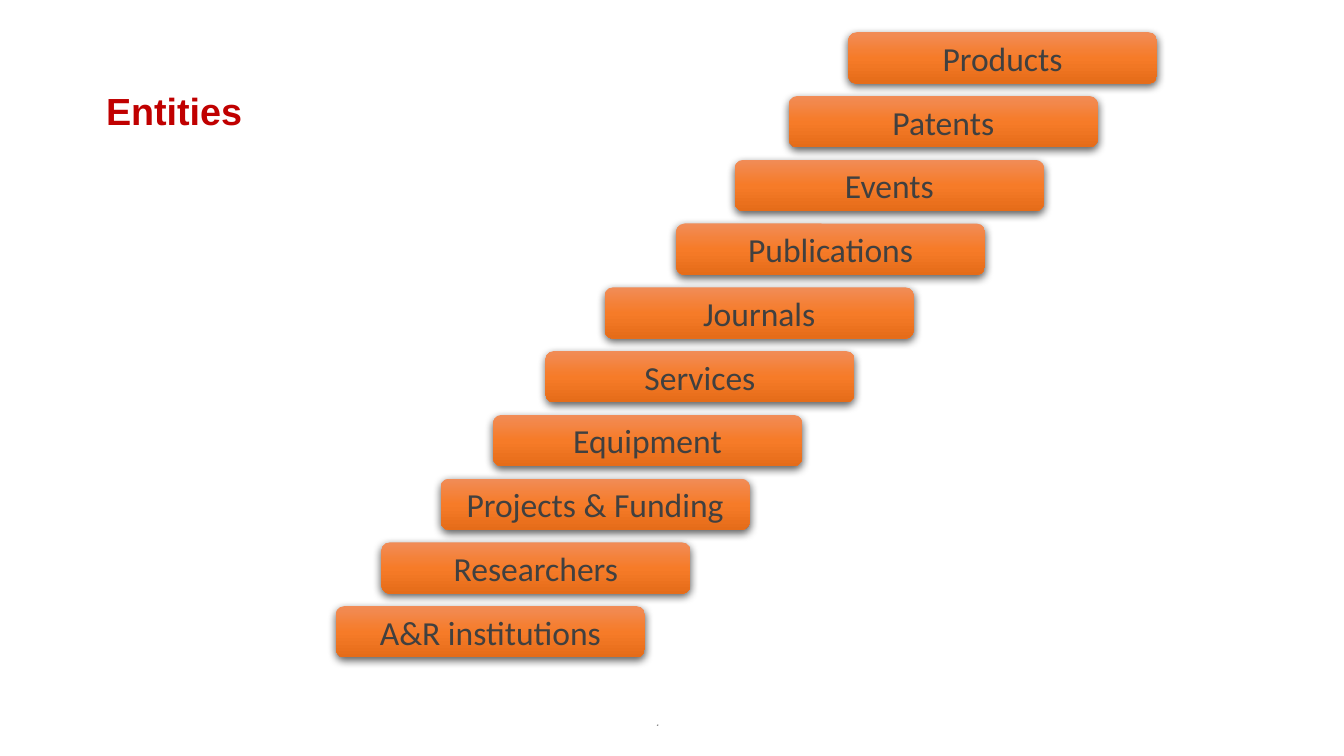
"""Build a slide with a title and a stair of entity bars."""
import copy
from dataclasses import dataclass

import pptx
import pptx.dml.color
import pptx.enum.shapes
import pptx.enum.text
import pptx.oxml
import pptx.oxml.ns
import pptx.util

Cm, Pt = pptx.util.Cm, pptx.util.Pt
RGB = pptx.dml.color.RGBColor.from_string
Align = pptx.enum.text.PP_ALIGN
Anchor = pptx.enum.text.MSO_ANCHOR


@dataclass(frozen=True)
class Theme:
    """Hold the colours, fonts and type sizes."""
    head: str = "C00000"
    ink: str = "404040"
    grey: str = "8C8C8C"
    glow: tuple = ((0, "F18C57"), (0.5, "F67B28"), (1, "E56C19"))
    sans: str = "Arial"
    body: str = "Calibri"
    big: float = 20.2
    mid: float = 18
    tiny: float = 7.5


THEME = Theme()
STEPS = (
    ("Products", 9.68),
    ("Patents", 8.56),
    ("Events", 7.54),
    ("Publications", 6.43),
    ("Journals", 5.08),
    ("Services", 3.96),
    ("Equipment", 2.97),
    ("Projects & Funding", 1.98),
    ("Researchers", 0.86),
    ("A&R institutions", 0),
)


def write(shape, text, font, size, color, align=Align.CENTER,
          bold=False, slant=False, space=None):
    """Put formatted text in a shape."""
    frame = shape.text_frame
    frame.text = text
    frame.word_wrap = True
    frame.auto_size = pptx.enum.text.MSO_AUTO_SIZE.NONE
    frame.vertical_anchor = Anchor.MIDDLE
    para = frame.paragraphs[0]
    para.alignment = align
    para.line_spacing = space
    face = para.runs[0].font
    face.name, face.size = font, Pt(size)
    face.bold, face.italic = bold, slant
    face.color.rgb = RGB(color)


def shade(shape):
    """Give a shape the glossy fill and a soft shadow."""
    props = shape._element.spPr
    qn = pptx.oxml.ns.qn
    shape.fill.gradient()
    stops = props.find(qn("a:gradFill")).find(qn("a:gsLst"))
    stops.append(copy.deepcopy(stops[-1]))
    shape.fill.gradient_angle = 270
    for stop, (place, color) in zip(shape.fill.gradient_stops, THEME.glow):
        stop.position = place
        stop.color.rgb = RGB(color)
    shape.line.fill.background()
    shape.shadow.inherit = False
    props.find(qn("a:effectLst")).append(pptx.oxml.parse_xml(
        f'<a:outerShdw {pptx.oxml.ns.nsdecls("a")} blurRad="{Pt(4.5)}" '
        f'dist="{Pt(1.5)}" dir="5400000" rotWithShape="0">'
        '<a:srgbClr val="000000"><a:alpha val="63000"/></a:srgbClr>'
        '</a:outerShdw>'))


def title(slide, left, top, width, height):
    """Place the slide title in its box."""
    shape = slide.shapes.title
    shape.left, shape.top = Cm(left), Cm(top)
    shape.width, shape.height = Cm(width), Cm(height)
    write(shape, "Entities", THEME.sans, THEME.big, THEME.head,
          align=Align.LEFT, bold=True, space=0.9)


def stairs(slide, left, top, width, height):
    """Place the bars from top to bottom of the box."""
    wide, tall = width - max(shift for _, shift in STEPS), 0.97
    pitch = (height - tall) / (len(STEPS) - 1)
    for row, (name, shift) in enumerate(STEPS):
        bar = slide.shapes.add_shape(
            pptx.enum.shapes.MSO_SHAPE.ROUNDED_RECTANGLE,
            Cm(left + shift), Cm(top + row * pitch), Cm(wide), Cm(tall))
        shade(bar)
        write(bar, name, THEME.body, THEME.mid, THEME.ink)
        bar.text_frame.margin_left = bar.text_frame.margin_right = 0


def footer(slide, left, top, width, height):
    """Place the small footer text in its box."""
    box = slide.shapes.add_textbox(Cm(left), Cm(top), Cm(width), Cm(height))
    write(box, ".", THEME.sans, THEME.tiny, THEME.grey, slant=True)


def main():
    """Build and save the deck."""
    deck = pptx.Presentation()
    deck.slide_width, deck.slide_height = Cm(25.4), Cm(14.28)
    slide = deck.slides.add_slide(deck.slide_layouts[5])
    footer(slide, 4.42, 13.23, 16.05, 0.76)
    title(slide, 1.75, 0.76, 21.9, 2.77)
    stairs(slide, 6.35, 0.61, 15.52, 11.81)
    deck.save("out.pptx")


if __name__ == "__main__":
    main()
